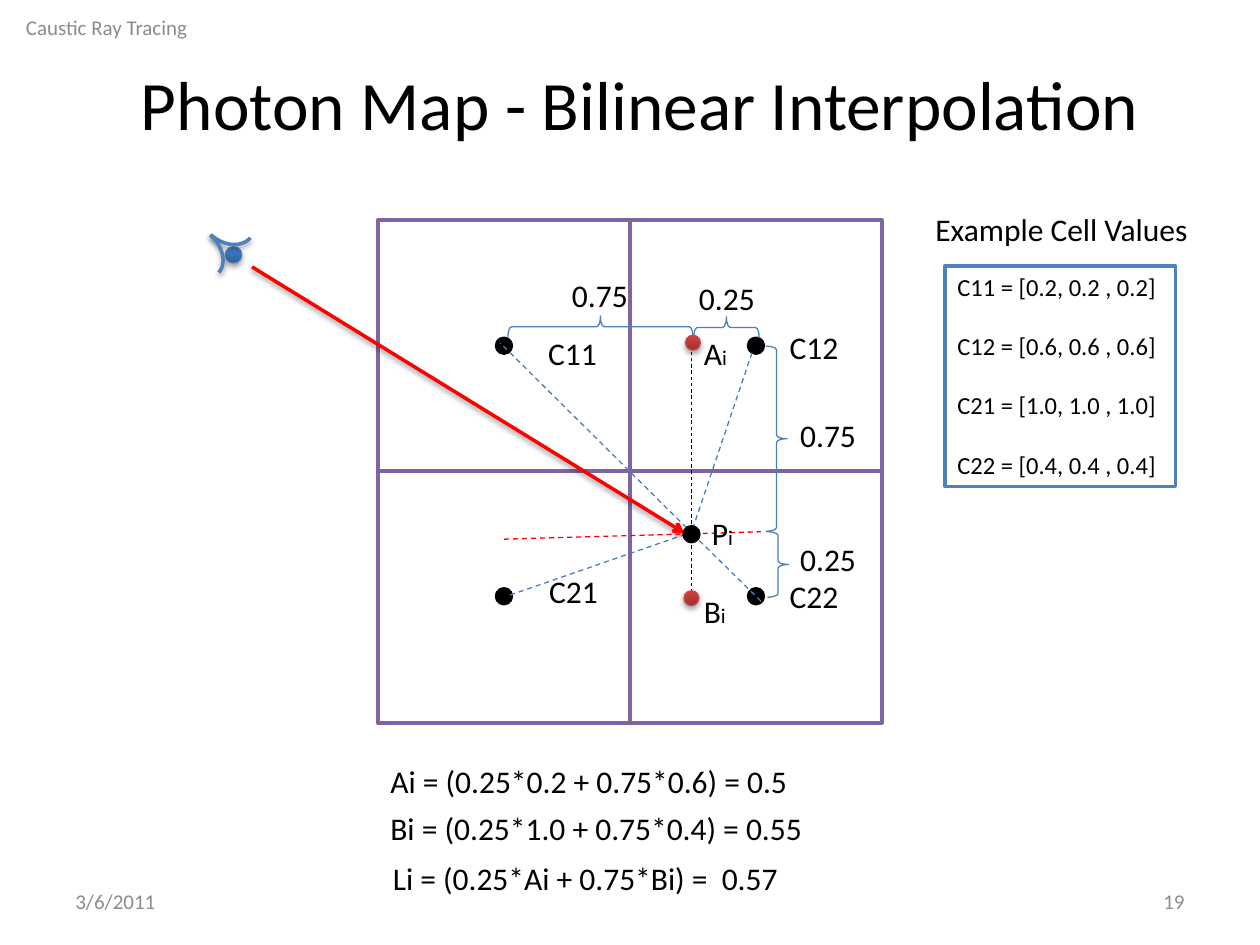
from dataclasses import dataclass
from itertools import product
from lxml.etree import SubElement as Sub
from pptx import Presentation
from pptx.dml.color import RGBColor as RGB
from pptx.enum.dml import MSO_LINE as Dash
from pptx.enum.shapes import MSO_CONNECTOR as Link, MSO_SHAPE as Kind
from pptx.enum.text import MSO_ANCHOR as Anchor, MSO_AUTO_SIZE as Auto, PP_ALIGN as Align
from pptx.oxml.ns import qn
from pptx.util import Cm, Pt


@dataclass(frozen=True)
class Theme:
    font: str = "Calibri"
    title: float = 39.6
    body: float = 18
    list: float = 14
    small: float = 12
    thick: float = 2
    thin: float = 0.75
    black: str = "000000"
    white: str = "FFFFFF"
    gray: str = "8C8C8C"
    red: str = "FF0000"
    purple: str = "8064A2"
    blue: str = "4F81BD"
    steel: str = "4B7EBC"
    rust: str = "BF4C48"
    iris: tuple = ("2F5F99", "3D7CC7")
    ember: tuple = ("9C2F2D", "CB3E3A")


T = Theme()


def rgb(tint):
    return RGB.from_string(tint)


def put(item, vals):
    for name, val in vals.items():
        setattr(item, name, val)


def ink(line, tint, width, dash=None):
    line.color.rgb = rgb(tint)
    put(line, {"width": Pt(width), "dash_style": dash})


def glow(item, alpha, dist):
    props = item._element.spPr
    list = props.find(qn("a:effectLst"))
    vals = {"blurRad": Pt(3.1), "dist": Pt(dist), "dir": 5400000, "rotWithShape": 0}
    drop = Sub(list, qn("a:outerShdw"), {key: str(val) for key, val in vals.items()})
    tone = Sub(drop, qn("a:srgbClr"), val=T.black)
    Sub(tone, qn("a:alpha"), val=str(alpha * 1000))


def shape(slide, kind, box, tint, width, fill=None, turn=0):
    item = slide.shapes.add_shape(kind, *map(Cm, box))
    item.shadow.inherit = False
    item.rotation = turn
    if fill:
        item.fill.solid()
        item.fill.fore_color.rgb = rgb(fill)
    else:
        item.fill.background()
    ink(item.line, tint, width)
    return item


def dot(slide, x, y, size=0.3):
    box = (x - size / 2, y - size / 2, size, size)
    return shape(slide, Kind.OVAL, box, T.black, T.thick, T.black)


def ball(slide, x, y, tint, tones, size=0.3):
    item = dot(slide, x, y, size)
    ink(item.line, tint, T.thin)
    item.fill.gradient()
    item.fill.gradient_angle = 90
    for stop, tone, place in zip(item.fill.gradient_stops, tones, (0, 0.8)):
        stop.color.rgb = rgb(tone)
        stop.position = place
    glow(item, 35, 1.8)


def arc(slide, box, flip=False):
    item = shape(slide, Kind.ARC, box, T.blue, T.thick, turn=41.5)
    if flip:
        item._element.spPr.xfrm.set("flipV", "1")
    glow(item, 38, 1.6)


def brace(slide, box, turn=0):
    item = shape(slide, Kind.RIGHT_BRACE, box, T.steel, T.thin, turn=turn)
    item.adjustments[0] = 0.169


def line(slide, ends, tint, width=T.thin, dash=Dash.DASH):
    item = slide.shapes.add_connector(Link.STRAIGHT, *map(Cm, ends))
    ink(item.line, tint, width, dash)
    Sub(item._element.spPr, qn("a:effectLst"))
    return item


def ray(slide, ends):
    item = line(slide, ends, T.red, T.thick, None)
    Sub(item.line._get_or_add_ln(), qn("a:tailEnd"), type="arrow")
    glow(item, 38, 1.6)


def write(para, text, size, tint):
    run = para.add_run()
    run.text = text
    put(run.font, {"name": T.font, "size": Pt(size)})
    run.font.color.rgb = rgb(tint)


def label(slide, box, text, size=T.body, tint=T.black, sub="", frame=None, para=None):
    item = slide.shapes.add_textbox(*map(Cm, box))
    put(item.text_frame, {"word_wrap": True, **(frame or {})})
    first = item.text_frame.paragraphs[0]
    put(first, para or {})
    write(first, text, size, tint)
    if sub:
        write(first, sub, T.small, tint)


def panel(slide, box, rows):
    item = shape(slide, Kind.RECTANGLE, box, T.blue, T.thick, T.white)
    frame = item.text_frame
    put(frame, {"word_wrap": True, "vertical_anchor": Anchor.TOP})
    for i, row in enumerate(rows):
        para = frame.add_paragraph() if i else frame.paragraphs[0]
        put(para, {"alignment": Align.LEFT, "space_before": Pt(17 if i else 0)})
        write(para, row, T.list, T.black)


def eye(slide):
    ball(slide, 4.71, 5.14, T.steel, T.iris, 0.33)
    arc(slide, (3.94, 3.89, 1.27, 0.97), True)
    arc(slide, (3.3, 4.62, 1.27, 0.91))


def grid(slide):
    for col, row in product(range(2), repeat=2):
        box = (7.62 + 5.08 * col, 4.44 + 5.06 * row, 5.08, 5.08)
        shape(slide, Kind.RECTANGLE, box, T.purple, T.thick, T.white)
    for x, y in product((10.16, 15.24), (6.97, 12.02)):
        dot(slide, x, y)


def rays(slide):
    ray(slide, (5.08, 5.38, 13.79, 10.74))
    for ends in ((15.16, 7.11, 13.97, 10.64), (15.34, 12.12, 14.05, 10.85),
                 (13.84, 10.64, 10.08, 6.91), (13.82, 10.77, 10.24, 12.01)):
        line(slide, ends, T.steel)
    line(slide, (13.94, 6.96, 13.94, 12.17), T.black, 0.5)
    line(slide, (10.16, 10.87, 15.34, 10.72), T.red)


def spans(slide):
    for x, y, high, turn in ((15.44, 6.98, 3.73, 0), (15.47, 10.72, 1.32, 0),
                             (11.89, 4.72, 3.73, 270), (14.43, 5.94, 1.32, 270)):
        brace(slide, (x, y, 0.43, high), turn)


def names(slide):
    tight = {"word_wrap": False, "auto_size": Auto.SHAPE_TO_FIT_TEXT}
    for text, x, y in (("C22", 15.67, 11.51), ("C12", 15.67, 6.48),
                       ("C11", 10.8, 6.6), ("C21", 10.82, 11.4),
                       ("0.75", 11.28, 5.44), ("0.25", 13.84, 5.51),
                       ("0.75", 15.88, 8.26), ("0.25", 15.88, 10.77)):
        wide = 1.5 if text[0] == "C" else 1.65
        label(slide, (x, y, wide, 1.02), text, frame=tight)
    for text, x, y in (("P", 14.1, 10.24), ("A", 13.94, 6.6), ("B", 13.94, 11.81)):
        label(slide, (x, y, 1.24, 1.02), text, sub="i")


def sums(slide):
    for x, y, text in ((7.62, 15.24, "Ai = (0.25*0.2 + 0.75*0.6) = 0.5"),
                       (7.62, 16.18, "Bi = (0.25*1.0 + 0.75*0.4) = 0.55"),
                       (7.67, 17.2, "Li = (0.25*Ai + 0.75*Bi) =  0.57")):
        label(slide, (x, y, 10.16, 1.02), text)


def edges(slide):
    mid = {"vertical_anchor": Anchor.MIDDLE}
    for box, text, size, tint, side in (
            ((1.47, 0.97, 22.86, 2.21), "Photon Map - Bilinear Interpolation",
             T.title, T.black, Align.CENTER),
            ((0.03, 0.03, 4.24, 1.02), "Caustic Ray Tracing", T.small, T.gray, Align.CENTER),
            ((1.27, 17.65, 5.92, 1.02), "3/6/2011", T.small, T.gray, Align.LEFT),
            ((18.21, 17.65, 5.92, 1.02), "19", T.small, T.gray, Align.RIGHT)):
        label(slide, box, text, size, tint, frame=mid, para={"alignment": side})


def main():
    deck = Presentation()
    put(deck, {"slide_width": Cm(25.4), "slide_height": Cm(19.05)})
    slide = deck.slides.add_slide(deck.slide_layouts[6])
    grid(slide)
    eye(slide)
    rays(slide)
    spans(slide)
    for x, y in ((13.97, 6.91), (13.94, 12.06)):
        ball(slide, x, y, T.rust, T.ember)
    names(slide)
    dot(slide, 13.94, 10.77)
    panel(slide, (19.05, 5.36, 4.65, 4.45),
          ("C11 = [0.2, 0.2 , 0.2]", "C12 = [0.6, 0.6 , 0.6]",
           "C21 = [1.0, 1.0 , 1.0]", "C22 = [0.4, 0.4 , 0.4]"))
    label(slide, (17.83, 4.11, 7.14, 1.02), "Example Cell Values",
          para={"alignment": Align.CENTER})
    sums(slide)
    edges(slide)
    deck.save("out.pptx")


if __name__ == "__main__":
    main()
